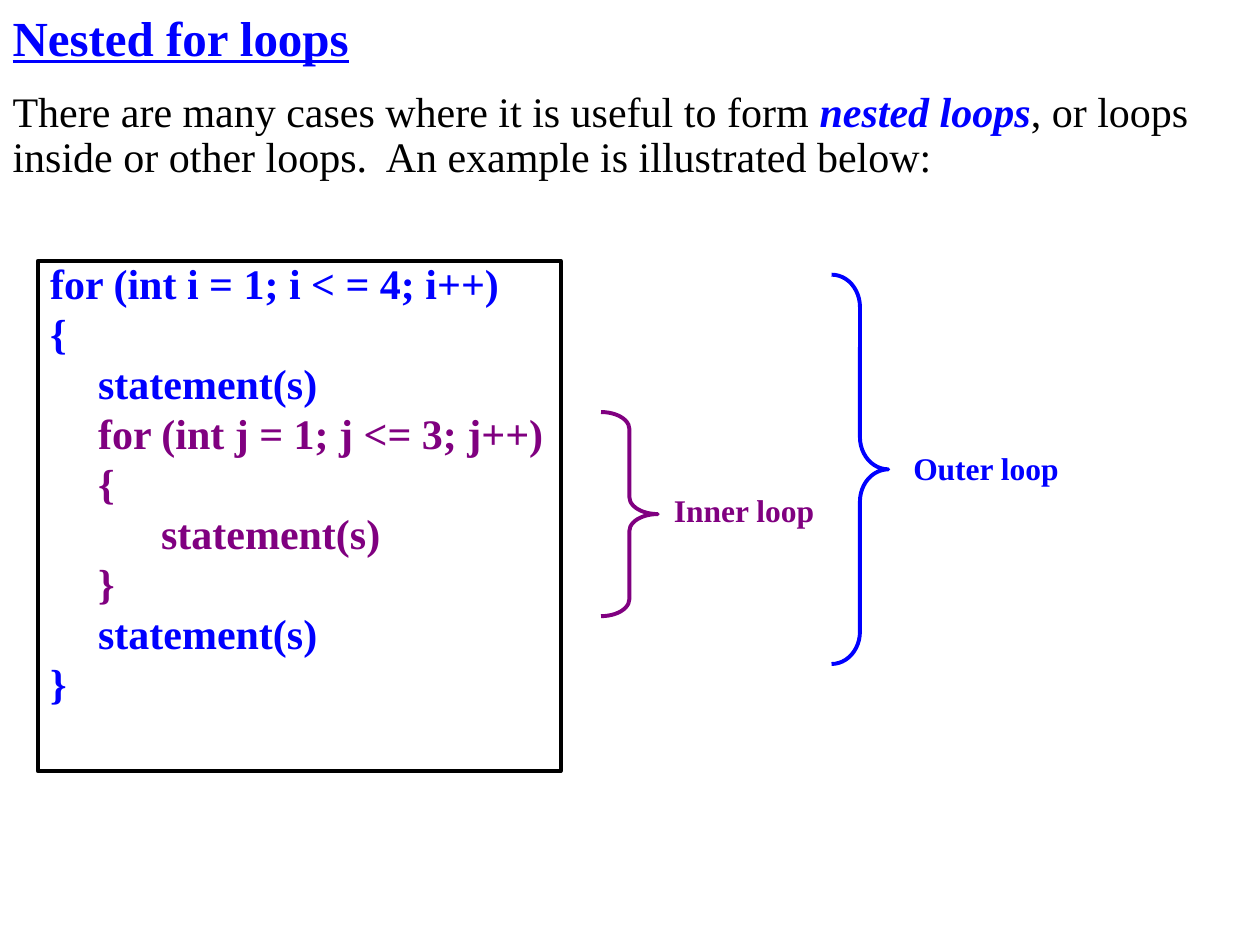
from lxml import etree
from pptx import Presentation
from pptx import util as u
from pptx.dml.color import RGBColor
from pptx.enum import shapes, text
from pptx.oxml.ns import qn

COLORS = {"black": "000000", "blue": "0000FF", "purple": "800080"}


class SlideBuilder:
    font_name = "Times New Roman"
    line_width = u.Pt(2.25)

    def __init__(self, s):
        self.s = s

    def place(self, sp, box):
        for name, value in zip(("left", "top", "width", "height"), box):
            setattr(sp, name, u.Inches(value))

    def frame(self, sp, **formats):
        tf = sp.text_frame
        for name, value in {"auto_size": text.MSO_AUTO_SIZE.NONE, **formats}.items():
            setattr(tf, name, value)
        return tf

    def paragraph(self, p, runs, size, indent=0, **formats):
        p.alignment = text.PP_ALIGN.LEFT
        for name, value in formats.items():
            setattr(p, name, value)
        pPr = p._p.get_or_add_pPr()
        pPr.set("marL", str(u.Inches(indent)))
        pPr.set("indent", str(-u.Inches(indent)))
        etree.SubElement(pPr, qn("a:buNone"))
        for words, color, style in runs:
            r = p.add_run()
            r.text = words
            font = {"name": self.font_name, "size": u.Pt(size), **style}
            for name, value in font.items():
                setattr(r.font, name, value)
            r.font.color.rgb = RGBColor.from_string(COLORS[color])

    def title(self, box, words):
        sp = self.s.shapes.title
        self.place(sp, box)
        tf = self.frame(sp, vertical_anchor=text.MSO_ANCHOR.MIDDLE)
        style = {"bold": True, "underline": True}
        self.paragraph(tf.paragraphs[0], [(words, "blue", style)], 28)

    def body(self, box, runs):
        sp = self.s.placeholders[1]
        self.place(sp, box)
        tf = self.frame(sp, vertical_anchor=text.MSO_ANCHOR.TOP)
        self.paragraph(tf.paragraphs[0], runs, 24,
                       line_spacing=0.9, space_before=u.Pt(4.8))

    def shape(self, kind, box, color):
        sp = self.s.shapes.add_shape(kind, *map(u.Inches, box))
        sp.shadow.inherit = False
        sp.fill.background()
        sp.line.color.rgb = RGBColor.from_string(COLORS[color])
        sp.line.width = self.line_width
        return sp

    def lines(self, sp, lines, size):
        tf = self.frame(sp, word_wrap=False, vertical_anchor=text.MSO_ANCHOR.TOP)
        for i, (words, color) in enumerate(lines):
            p = tf.add_paragraph() if i else tf.paragraphs[0]
            self.paragraph(p, [(words, color, {"bold": True})], size, 0.38,
                           line_spacing=0.8, space_before=u.Pt(size * 0.23))

    def code(self, box, lines):
        self.lines(self.shape(shapes.MSO_SHAPE.RECTANGLE, box, "black"), lines, 24)

    def brace(self, box, color, curve):
        sp = self.shape(shapes.MSO_SHAPE.RIGHT_BRACE, box, color)
        sp.adjustments[0] = curve

    def label(self, box, words, color):
        sp = self.s.shapes.add_textbox(*map(u.Inches, box))
        self.lines(sp, [(words, color)], 18)


def main():
    prs = Presentation()
    prs.slide_width, prs.slide_height = u.Inches(10), u.Inches(7.5)
    b = SlideBuilder(prs.slides.add_slide(prs.slide_layouts[1]))

    b.title((0, 0, 4.62, 0.58), "Nested for loops")
    b.body((0, 0.67, 9.84, 0.82), [
        ("There are many cases where it is useful to form ", "black", {}),
        ("nested loops", "blue", {"bold": True, "italic": True}),
        (", or loops inside or other loops.  An example is illustrated below:",
         "black", {}),
    ])
    b.code((0.3, 2.07, 4.15, 4.05), [
        ("for (int i = 1; i < = 4; i++)", "blue"),
        ("{", "blue"),
        ("\tstatement(s)", "blue"),
        ("\tfor (int j = 1; j <= 3; j++)", "purple"),
        ("\t{", "purple"),
        ("\t\tstatement(s)", "purple"),
        ("\t}", "purple"),
        ("\tstatement(s)", "blue"),
        ("}", "blue"),
    ])
    b.brace((4.77, 3.27, 0.45, 1.62), "purple", 0.3)
    b.label((5.25, 3.91, 1.32, 0.34), "Inner loop", "purple")
    b.brace((6.6, 2.18, 0.45, 3.09), "blue", 0.57)
    b.label((7.15, 3.57, 1.36, 0.34), "Outer loop", "blue")

    prs.save("out.pptx")


if __name__ == "__main__":
    main()
